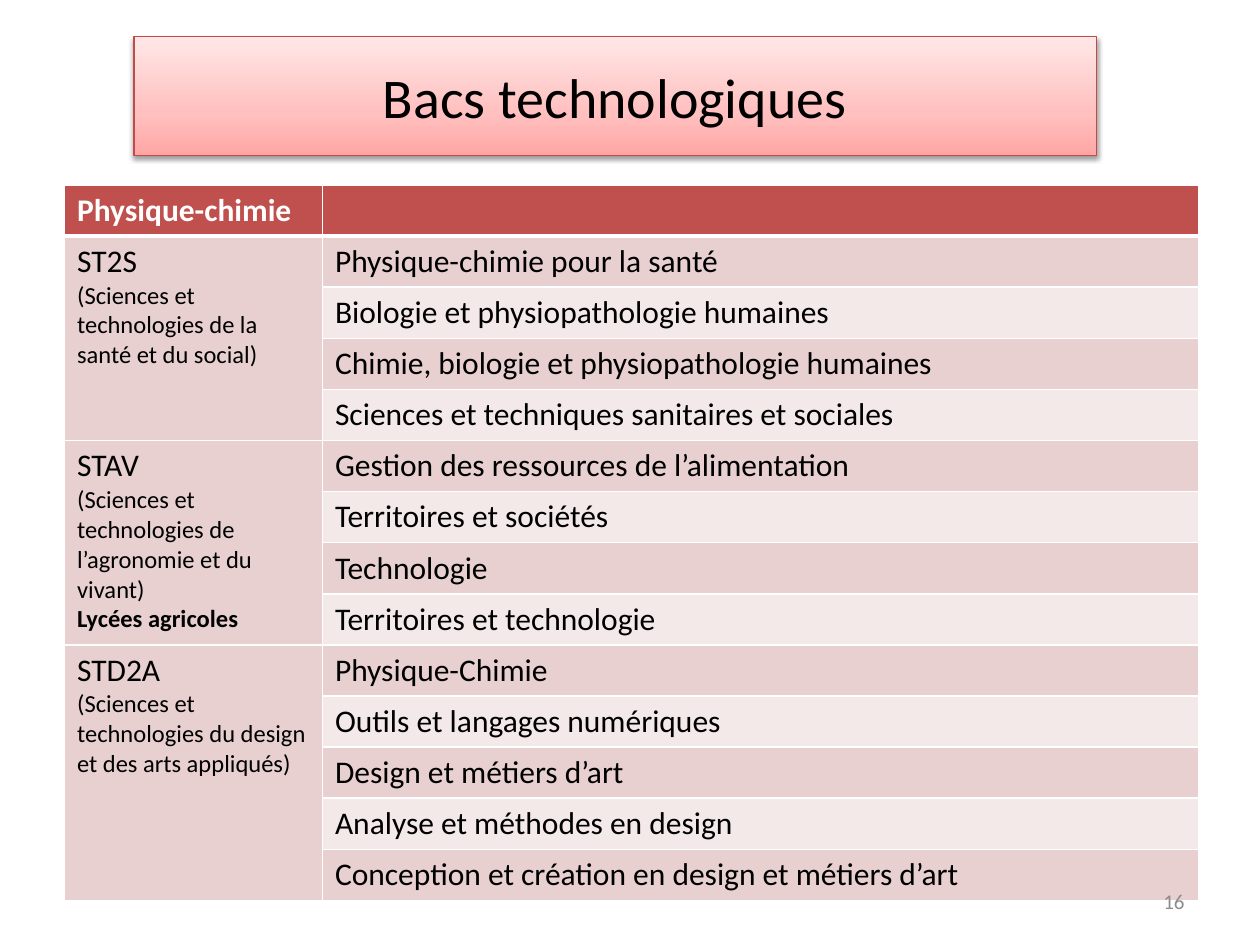
from dataclasses import dataclass

from lxml import etree
from pptx import Presentation
from pptx.dml.color import RGBColor
from pptx.enum.shapes import MSO_SHAPE
from pptx.enum.text import MSO_ANCHOR, PP_ALIGN
from pptx.oxml.ns import qn
from pptx.util import Cm, Pt

RECT = MSO_SHAPE.RECTANGLE
MIDDLE = MSO_ANCHOR.MIDDLE
LEFT, CENTER, RIGHT = PP_ALIGN.LEFT, PP_ALIGN.CENTER, PP_ALIGN.RIGHT

FONT = "Calibri"
BLACK, WHITE, GREY = "000000", "FFFFFF", "8C8C8C"
HEADER, BAND_DARK, BAND_LIGHT = "C0504D", "E8D0D0", "F4E9E9"
TITLE_STOPS = [(0, "FFA6A5"), (35, "FFC0BF"), (100, "FFE7E7")]
ROW_HEIGHT = Cm(1.03)
COLUMN_WIDTHS = [Cm(5.2), Cm(17.66)]


@dataclass
class Track:
    code: str
    meaning: str
    subjects: list[str]
    remark: str = ""


TRACKS = [
    Track("ST2S", "(Sciences et technologies de la santé et du social)", [
        "Physique-chimie pour la santé",
        "Biologie et physiopathologie humaines",
        "Chimie, biologie et physiopathologie humaines",
        "Sciences et techniques sanitaires et sociales",
    ]),
    Track("STAV", "(Sciences et technologies de l’agronomie et du vivant)", [
        "Gestion des ressources de l’alimentation",
        "Territoires et sociétés",
        "Technologie",
        "Territoires et technologie",
    ], "Lycées agricoles"),
    Track("STD2A", "(Sciences et technologies du design et des arts appliqués)", [
        "Physique-Chimie",
        "Outils et langages numériques",
        "Design et métiers d’art",
        "Analyse et méthodes en design",
        "Conception et création en design et métiers d’art",
    ]),
]


def rgb(color: str) -> RGBColor:
    return RGBColor.from_string(color)


def write(tf, text: str, *, size=18, color=BLACK, bold=False, align=LEFT) -> None:
    """Fill the first paragraph if it is empty, otherwise add one."""
    p = tf.paragraphs[0] if not tf.text else tf.add_paragraph()
    p.alignment = align
    r = p.add_run()
    r.text = text
    r.font.name, r.font.size, r.font.bold = FONT, Pt(size), bold
    r.font.color.rgb = rgb(color)


def add_color(parent, color: str):
    return etree.SubElement(parent, qn("a:srgbClr"), val=color)


def set_gradient(sp, stops: list[tuple[int, str]], angle: int) -> None:
    """Apply any number of stops; the angle runs clockwise."""
    sp.fill.gradient()
    grad = sp._element.spPr.find(qn("a:gradFill"))
    stop_list = grad.find(qn("a:gsLst"))
    for old in list(stop_list):
        stop_list.remove(old)
    for position, color in stops:
        add_color(etree.SubElement(stop_list, qn("a:gs"), pos=str(position * 1000)), color)
    grad.find(qn("a:lin")).set("ang", str(angle * 60000))


def set_shadow(sp, *, blur: float, distance: float, angle: int, opacity: int) -> None:
    sp.shadow.inherit = False
    effects = sp._element.spPr.find(qn("a:effectLst"))
    outer = etree.SubElement(
        effects, qn("a:outerShdw"), blurRad=str(Pt(blur)), dist=str(Pt(distance)),
        dir=str(angle * 60000), rotWithShape="0")
    etree.SubElement(add_color(outer, BLACK), qn("a:alpha"), val=str(opacity * 1000))


def style_cell(cell, color: str, *, top=1, bottom=1) -> None:
    """Set white borders, with widths in points, and a solid fill."""
    tc_pr = cell._tc.get_or_add_tcPr()
    for side, width in (("L", 1), ("R", 1), ("T", top), ("B", bottom)):
        ln = etree.SubElement(tc_pr, qn(f"a:ln{side}"), w=str(Pt(width)))
        add_color(etree.SubElement(ln, qn("a:solidFill")), WHITE)
    cell.fill.solid()
    cell.fill.fore_color.rgb = rgb(color)


def add_title(slide, text: str) -> None:
    sp = slide.shapes.add_shape(RECT, Cm(2.7), Cm(0.73), Cm(19.4), Cm(2.4))
    set_gradient(sp, TITLE_STOPS, 270)
    sp.line.color.rgb = rgb("BF4C48")
    sp.line.width = Pt(0.75)
    set_shadow(sp, blur=3.1, distance=1.6, angle=90, opacity=38)
    sp.text_frame.vertical_anchor = MIDDLE
    write(sp.text_frame, text, size=32, align=CENTER)


def add_track_table(slide, heading: str, tracks: list[Track]) -> None:
    count = 1 + sum(len(track.subjects) for track in tracks)
    table = slide.shapes.add_table(
        count, 2, Cm(1.3), Cm(3.73), sum(COLUMN_WIDTHS), ROW_HEIGHT * count).table
    for column, width in zip(table.columns, COLUMN_WIDTHS):
        column.width = width
    for cell in table.rows[0].cells:
        style_cell(cell, HEADER, bottom=3)
    write(table.cell(0, 0).text_frame, heading, color=WHITE, bold=True)

    row = 1
    for track in tracks:
        first = table.cell(row, 0)
        first.merge(table.cell(row + len(track.subjects) - 1, 1 - 1))
        write(first.text_frame, track.code)
        write(first.text_frame, track.meaning, size=14)
        if track.remark:
            write(first.text_frame, track.remark, size=14, bold=True)
        for subject in track.subjects:
            top = 3 if row == 1 else 1
            style_cell(table.cell(row, 0), BAND_DARK, top=top)
            style_cell(table.cell(row, 1), BAND_DARK if row % 2 else BAND_LIGHT, top=top)
            write(table.cell(row, 1).text_frame, subject)
            row += 1


def add_page_number(slide, number: int) -> None:
    tf = slide.shapes.add_textbox(Cm(18.2), Cm(17.65), Cm(5.93), Cm(1.02)).text_frame
    tf.word_wrap = True
    tf.vertical_anchor = MIDDLE
    write(tf, str(number), size=12, color=GREY, align=RIGHT)


def main() -> None:
    prs = Presentation()
    prs.slide_width, prs.slide_height = Cm(25.4), Cm(19.05)
    slide = prs.slides.add_slide(prs.slide_layouts[6])
    add_title(slide, "Bacs technologiques")
    add_track_table(slide, "Physique-chimie", TRACKS)
    add_page_number(slide, 16)
    prs.save("out.pptx")


if __name__ == "__main__":
    main()
